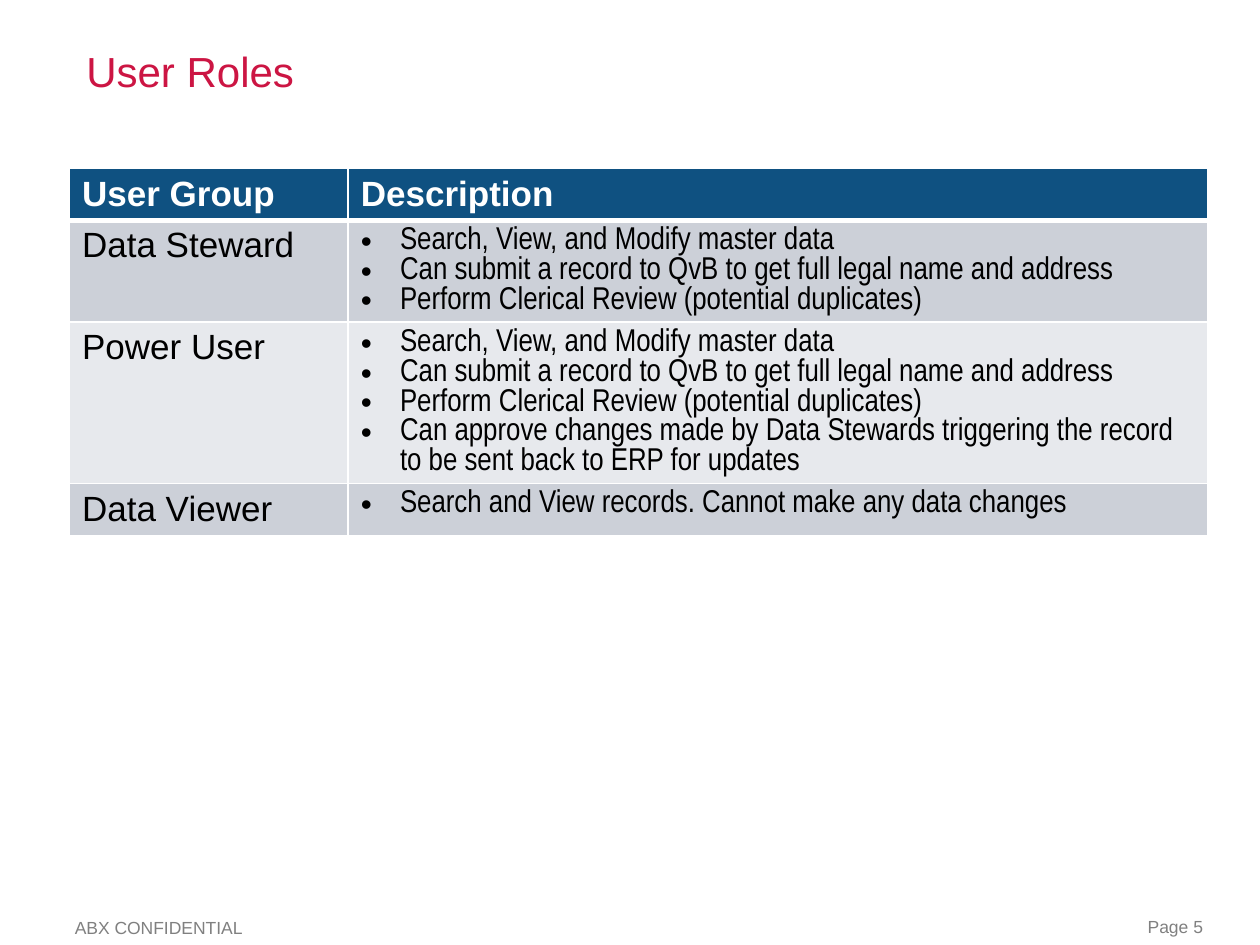
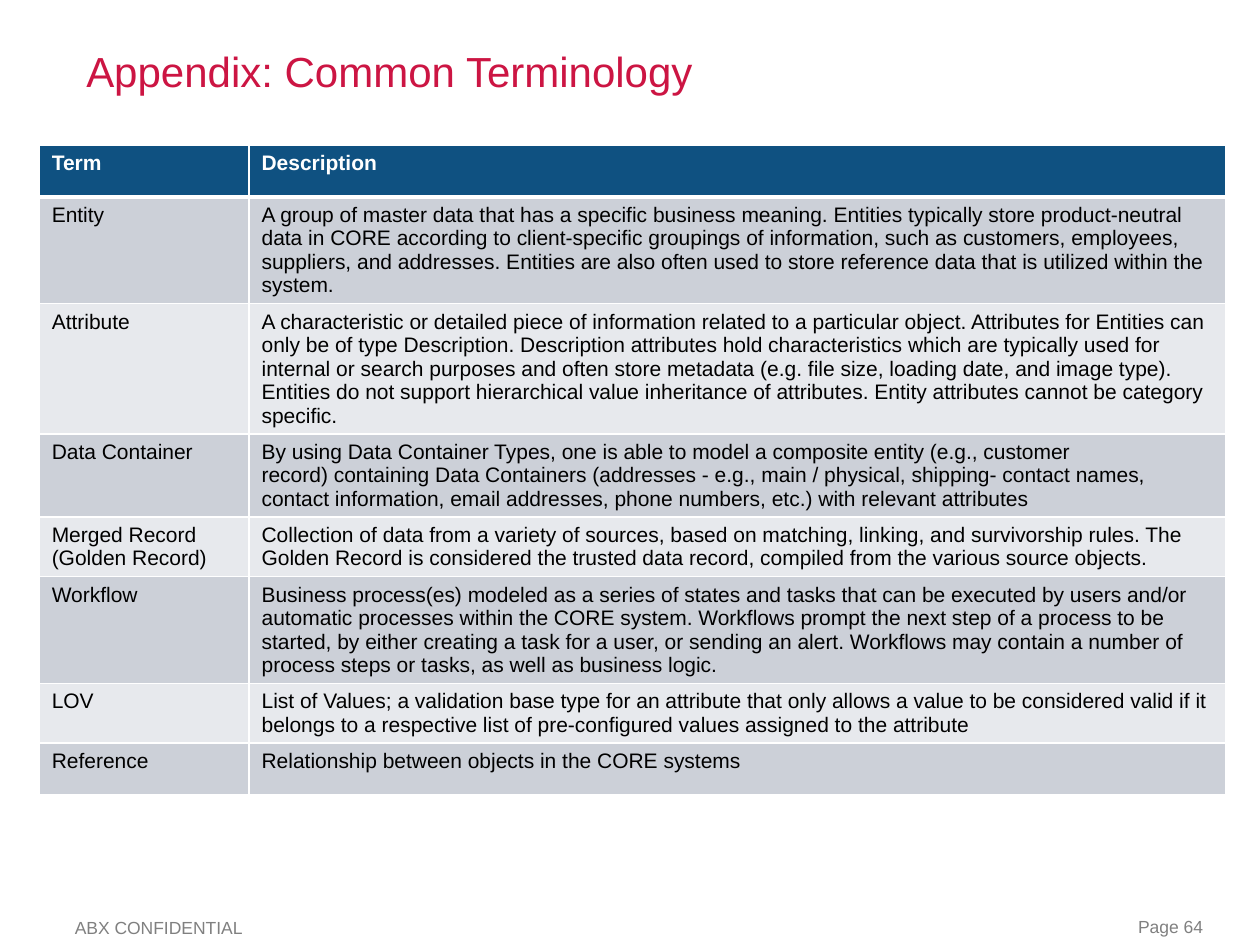
from lxml.etree import SubElement
from pptx import Presentation
from pptx.dml.color import RGBColor
from pptx.enum.text import MSO_ANCHOR as ANCHOR, PP_ALIGN as ALIGN
from pptx.oxml.ns import qn
from pptx.util import Cm, Pt

RED, BLUE, GREY, WHITE, BLACK = "CC1543", "0F5181", "808080", "FFFFFF", "000000"
BANDS = ("CCD0D8", "E7E9ED")
ROW_HEIGHT = 1.04
INDENT = Cm(0.79)
NBSP = chr(160)
TITLE_FONT = dict(name="Arial", size=Pt(24))
FOOTER_FONT = dict(name="Arial", size=Pt(10))
ROLE_FONT = dict(name="Arial", size=Pt(20))
DUTY_FONT = dict(name="Arial Narrow", size=Pt(18))
TERM_FONT = dict(name="Arial", size=Pt(12))
LINE_HEIGHTS = {Pt(20): Pt(22), Pt(18): Pt(17), Pt(12): Pt(13.45)}

STEWARD_DUTIES = [
    "Search, View, and Modify master data",
    "Can submit a record to QvB to get full legal name and address",
    "Perform Clerical Review (potential duplicates)",
]
ROLES = [
    ("User Group", "Description"),
    ("Data Steward", STEWARD_DUTIES),
    ("Power User", STEWARD_DUTIES + [
        "Can approve changes made by Data Stewards triggering the record "
        "to be sent back to ERP for updates"]),
    ("Data Viewer", ["Search and View records. Cannot make any data changes"]),
]
TERMS = [
    ("Term", "Description"),
    ("Entity",
     "A group of master data that has a specific business meaning. Entities typically "
     "store product-neutral data in CORE according to client-specific groupings of "
     "information, such as customers, employees, suppliers, and addresses. Entities are "
     "also often used to store reference data that is utilized within the system."),
    ("Attribute",
     "A characteristic or detailed piece of information related to a particular object. "
     "Attributes for Entities can only be of type Description. Description attributes "
     "hold characteristics which are typically used for internal or search purposes and "
     "often store metadata (e.g. file size, loading date, and image type). Entities do "
     "not support hierarchical value inheritance of attributes. Entity attributes cannot "
     "be category specific."),
    ("Data Container",
     "By using Data Container Types, one is able to model a composite entity (e.g., "
     f"customer record){NBSP}containing Data Containers (addresses - e.g., main / "
     "physical, shipping- contact names, contact information, email addresses, phone "
     "numbers, etc.) with relevant attributes"),
    (["Merged Record", "(Golden Record)"],
     "Collection of data from a variety of sources, based on matching, linking, and "
     "survivorship rules. The Golden Record is considered the trusted data record, "
     "compiled from the various source objects."),
    ("Workflow",
     "Business process(es) modeled as a series of states and tasks that can be executed "
     "by users and/or automatic processes within the CORE system. Workflows prompt the "
     "next step of a process to be started, by either creating a task for a user, or "
     "sending an alert. Workflows may contain a number of process steps or tasks, as "
     "well as business logic."),
    ("LOV",
     "List of Values; a validation base type for an attribute that only allows a value "
     "to be considered valid if it belongs to a respective list of pre-configured values "
     "assigned to the attribute"),
    ("Reference", "Relationship between objects in the CORE systems"),
]


def rgb(color):
    """Turn a hex string into a colour."""
    return RGBColor.from_string(color)


def add_bullet(p):
    """Give a paragraph a hanging round bullet."""
    pPr = p._p.get_or_add_pPr()
    pPr.set("marL", str(INDENT))
    pPr.set("indent", str(-INDENT))
    SubElement(pPr, qn("a:buFont"), typeface="Arial")
    SubElement(pPr, qn("a:buChar"), char="•")


def write(tf, content, font, color, bulleted=False):
    """Write one string or a list of paragraphs in one format."""
    lines = [content] if isinstance(content, str) else content
    for i, line in enumerate(lines):
        p = tf.add_paragraph() if i else tf.paragraphs[0]
        if bulleted:
            add_bullet(p)
        p.line_spacing = LINE_HEIGHTS.get(font["size"])
        r = p.add_run()
        r.text = line
        for key, value in font.items():
            setattr(r.font, key, value)
        r.font.color.rgb = rgb(color)


def add_text(slide, box, text, font, color, anchor=ANCHOR.MIDDLE, align=ALIGN.LEFT):
    """Add a wrapped text box."""
    tf = slide.shapes.add_textbox(*map(Cm, box)).text_frame
    tf.word_wrap = True
    tf.vertical_anchor = anchor
    write(tf, text, font, color)
    tf.paragraphs[0].alignment = align


def set_borders(cell, top, bottom):
    """Draw white cell borders, with top and bottom widths in points."""
    tcPr = cell._tc.get_or_add_tcPr()
    for side, width in dict(L=1, R=1, T=top, B=bottom).items():
        ln = SubElement(tcPr, qn(f"a:ln{side}"), w=str(Pt(width)))
        fill = SubElement(ln, qn("a:solidFill"))
        SubElement(fill, qn("a:srgbClr"), val=WHITE)


def add_banded_table(slide, left, top, widths, rows, font, list_font):
    """Add a table with a blue header and alternating grey rows."""
    size = (sum(widths), ROW_HEIGHT * len(rows))
    table = slide.shapes.add_table(
        len(rows), len(widths), *map(Cm, (left, top, *size))).table
    for column, width in zip(table.columns, widths):
        column.width = Cm(width)
    for i, row in enumerate(rows):
        header = i == 0
        for j, content in enumerate(row):
            cell = table.cell(i, j)
            set_borders(cell, 3 if i == 1 else 1, 3 if header else 1)
            cell.fill.solid()
            cell.fill.fore_color.rgb = rgb(BLUE if header else BANDS[(i - 1) % 2])
            bulleted = j == 1 and isinstance(content, list)
            cell_font = dict(list_font if bulleted else font, bold=header)
            write(cell.text_frame, content, cell_font,
                  WHITE if header else BLACK, bulleted)


def add_page(prs, title, number):
    """Add a slide with its title and footers."""
    slide = prs.slides.add_slide(prs.slide_layouts[6])
    add_text(slide, (16.85, 18.34, 7.65, 0.69), f"Page {number}", FOOTER_FONT, GREY,
             ANCHOR.TOP, ALIGN.RIGHT)
    add_text(slide, (1.26, 18.36, 4.14, 0.69), "ABX CONFIDENTIAL", FOOTER_FONT, GREY)
    add_text(slide, (1.49, 0.22, 18.92, 2.41), title, TITLE_FONT, RED)
    return slide


def main():
    """Build and save the slides."""
    prs = Presentation()
    prs.slide_width, prs.slide_height = Cm(25.4), Cm(19.05)
    roles = add_page(prs, "User Roles", 5)
    add_banded_table(roles, 1.4, 3.4, (5.62, 17.32), ROLES, ROLE_FONT, DUTY_FONT)
    terms = add_page(prs, "Appendix: Common Terminology", 64)
    add_banded_table(terms, 0.79, 2.93, (4.23, 19.68), TERMS, TERM_FONT, TERM_FONT)
    prs.save("out.pptx")


if __name__ == "__main__":
    main()
